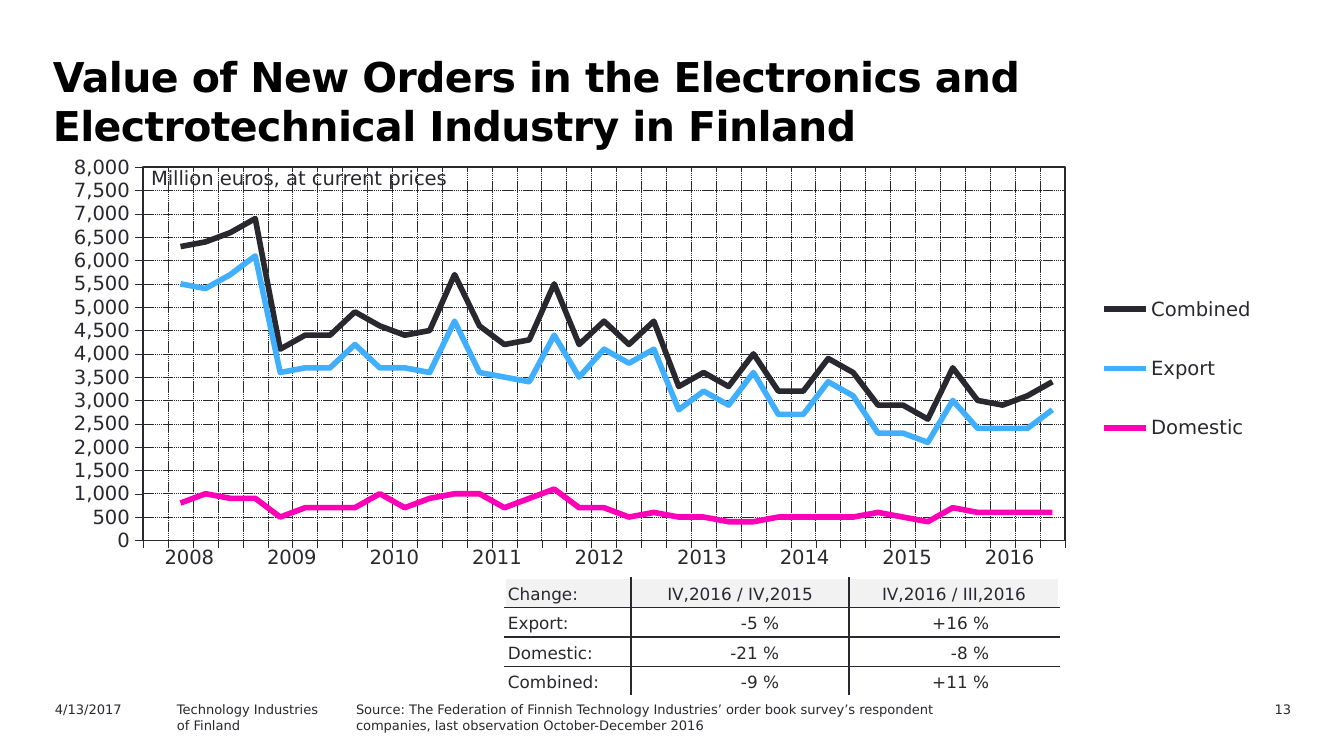
from lxml import etree
from pptx import Presentation
from pptx import util as u
from pptx.chart.data import CategoryChartData
from pptx.dml.color import RGBColor
from pptx.enum import chart as ch
from pptx.enum import dml, text
from pptx.oxml.ns import qn

FONT, INK, WHITE = "DejaVu Sans", "29282E", "FFFFFF"
NO_STYLE = "{2D5ABB26-0587-4C30-8999-92F81FD0307C}"
SERIES = {
    "Combined": (INK, [
        None, 6300, 6400, 6600, 6900, 4100, 4400, 4400, 4900, 4600, 4400, 4500, 5700,
        4600, 4200, 4300, 5500, 4200, 4700, 4200, 4700, 3300, 3600, 3300, 4000,
        3200, 3200, 3900, 3600, 2900, 2900, 2600, 3700, 3000, 2900, 3100, 3400]),
    "Export": ("40AFFF", [
        None, 5500, 5400, 5700, 6100, 3600, 3700, 3700, 4200, 3700, 3700, 3600, 4700,
        3600, 3500, 3400, 4400, 3500, 4100, 3800, 4100, 2800, 3200, 2900, 3600,
        2700, 2700, 3400, 3100, 2300, 2300, 2100, 3000, 2400, 2400, 2400, 2800]),
    "Domestic": ("FF00B8", [
        None, 800, 1000, 900, 900, 500, 700, 700, 700, 1000, 700, 900, 1000,
        1000, 700, 900, 1100, 700, 700, 500, 600, 500, 500, 400, 400,
        500, 500, 500, 500, 600, 500, 400, 700, 600, 600, 600, 600]),
}
CHANGES = [
    ["Change:", "IV,2016 / IV,2015", "IV,2016 / III,2016"],
    ["Export:", "-5 %", "+16 %"],
    ["Domestic:", "-21 %", "-8 %"],
    ["Combined:", "-9 %", "+11 %"],
]


def px(n):
    """Turn pixels into EMU."""
    return u.Emu(round(n * 914400 / 134.4))


def rgb(value):
    """Turn a hex string into a colour."""
    return RGBColor.from_string(value)


def style_font(font, size, color=INK, bold=False):
    """Set the typeface, size, colour and weight of a font."""
    font.name, font.size, font.bold = FONT, u.Pt(size), bold
    font.color.rgb = rgb(color)


def style_line(line, width, color=INK, dash=None):
    """Set the colour, width and dash of a line."""
    line.color.rgb = rgb(color)
    line.width = u.Pt(width)
    if dash:
        line.dash_style = dash


def write(tf, content, size, color=INK, bold=False, align="LEFT", spacing=None):
    """Fill a text frame, one paragraph for each line of content."""
    for i, line in enumerate(content.split("\n")):
        p = tf.add_paragraph() if i else tf.paragraphs[0]
        p.alignment = getattr(text.PP_ALIGN, align)
        r = p.add_run()
        r.text = line
        style_font(r.font, size, color, bold)
        if spacing is not None:
            r.font._element.set("spc", str(spacing))


def add_text(s, box, content, size, wrap=True, insets=(13, 7, 13, 7), **fmt):
    """Add a text box with the given insets."""
    tf = s.shapes.add_textbox(*map(px, box)).text_frame
    tf.word_wrap = wrap
    tf.margin_left, tf.margin_top, tf.margin_right, tf.margin_bottom = map(px, insets)
    write(tf, content, size, **fmt)


def add_plain_table(s, box, rows, cols):
    """Add a table without banding or style."""
    frame = s.shapes.add_table(rows, cols, *map(px, box))
    for style in frame._element.iter(qn("a:tableStyleId")):
        style.text = NO_STYLE
    table = frame.table
    table.first_row = table.horz_banding = False
    return table


def set_borders(cell, **colors):
    """Draw one-point cell borders, keyed by side."""
    tcPr = cell._tc.get_or_add_tcPr()
    for i, (side, color) in enumerate(colors.items()):
        ln = etree.Element(qn("a:ln" + side), w="12700")
        fill = etree.SubElement(ln, qn("a:solidFill"))
        etree.SubElement(fill, qn("a:srgbClr"), val=color)
        tcPr.insert(i, ln)


def set_layout(parent, index, x, y, w, h, inner=False):
    """Place a chart part by fractions of the chart area."""
    for old in parent.findall(qn("c:layout")):
        parent.remove(old)
    layout = etree.Element(qn("c:layout"))
    manual = etree.SubElement(layout, qn("c:manualLayout"))
    if inner:
        etree.SubElement(manual, qn("c:layoutTarget"), val="inner")
    for key in "xMode", "yMode":
        etree.SubElement(manual, qn("c:" + key), val="edge")
    for key, value in zip("xywh", (x, y, w, h)):
        etree.SubElement(manual, qn("c:" + key), val=str(value))
    parent.insert(index, layout)


def add_orders_chart(s, box):
    """Add the line chart of new orders with its unit label."""
    data = CategoryChartData(number_format="#,##0")
    data.categories = [str(n + 1) for n in range(len(SERIES["Combined"][1]))]
    for name, (_, values) in SERIES.items():
        data.add_series(name, values)
    chart = s.shapes.add_chart(ch.XL_CHART_TYPE.LINE, *map(px, box), data).chart
    style_font(chart.font, 10.5)
    chart.has_title = False
    chart.plots[0].vary_by_categories = False
    for series in chart.plots[0].series:
        series.smooth = False
        series.marker.style = ch.XL_MARKER_STYLE.NONE
        style_line(series.format.line, 3, SERIES[series.name][0])

    for axis in chart.category_axis, chart.value_axis:
        axis.has_major_gridlines = True
        style_line(axis.major_gridlines.format.line, 0.25, dash=dml.MSO_LINE.SQUARE_DOT)
        style_line(axis.format.line, 0.22)
        axis.major_tick_mark = ch.XL_TICK_MARK.OUTSIDE
        axis.minor_tick_mark = ch.XL_TICK_MARK.NONE
    chart.category_axis.tick_label_position = ch.XL_TICK_LABEL_POSITION.NONE
    axis = chart.value_axis
    axis.minimum_scale, axis.maximum_scale, axis.major_unit = 0, 8000, 500
    axis.tick_labels.number_format = "#,##0"
    axis.tick_labels.number_format_is_linked = False
    style_font(axis.tick_labels.font, 10.5)
    for cross in chart._chartSpace.iter(qn("c:crossBetween")):
        cross.set("val", "midCat")

    chart.has_legend = True
    chart.legend.position = ch.XL_LEGEND_POSITION.RIGHT
    chart.legend.include_in_layout = False
    style_font(chart.legend.font, 10.5)
    set_layout(chart.legend._element, 1, 0.85, 0.25, 0.14, 0.48)

    area = chart._chartSpace.chart.plotArea
    set_layout(area, 0, 0.082, 0.041, 0.747, 0.833, inner=True)
    spPr = etree.SubElement(area, qn("c:spPr"))
    etree.SubElement(spPr, qn("a:noFill"))
    ln = etree.SubElement(spPr, qn("a:ln"), w="12700")
    fill = etree.SubElement(ln, qn("a:solidFill"))
    etree.SubElement(fill, qn("a:srgbClr"), val=INK)

    x, y, _, _ = box
    add_text(s, (x + 97, y + 10, 328, 36), "Million euros, at current prices", 10.5,
             wrap=False, insets=(12, 7, 12, 7))


def add_years(s, box):
    """Add the row of years under the chart."""
    years = range(2008, 2017)
    table = add_plain_table(s, box, 1, len(years))
    for cell, year in zip(table.iter_cells(), years):
        cell.fill.background()
        write(cell.text_frame, str(year), 10.5, align="CENTER")


def add_changes(s, box):
    """Add the table of changes, ruled inside and white at its edges."""
    table = add_plain_table(s, box, len(CHANGES), len(CHANGES[0]))
    for column, width in zip(table.columns, (126, 218, 210)):
        column.width = px(width)
    last_row, last_col = len(CHANGES) - 1, len(CHANGES[0]) - 1
    for i, row in enumerate(CHANGES):
        for j, value in enumerate(row):
            cell = table.cell(i, j)
            number = i > 0 and j > 0
            cell.margin_left = cell.margin_top = cell.margin_bottom = px(3)
            cell.margin_right = px(70 if number else 3)
            cell.vertical_anchor = text.MSO_ANCHOR.BOTTOM
            cell.fill.solid()
            cell.fill.fore_color.rgb = rgb(WHITE if i else "F2F2F2")
            set_borders(cell, L=INK if j else WHITE, R=INK if j < last_col else WHITE,
                        T=INK if i else WHITE, B=INK if i < last_row else WHITE)
            align = "RIGHT" if number else "CENTER" if j else "LEFT"
            write(cell.text_frame, value, 9, align=align)


def add_footer(s, box):
    """Add the date, publisher, source and page number."""
    x, y, w, h = box
    add_text(s, (x, y, 134, h), "4/13/2017", 7)
    add_text(s, (x + 122, y, 233, h), "Technology Industries\nof Finland", 7)
    add_text(s, (x + 301, y, 640, h),
             "Source: The Federation of Finnish Technology Industries’ order book survey’s "
             "respondent companies, last observation October-December 2016", 7)
    add_text(s, (x + w - 126, y, 126, h), "13", 7, align="RIGHT")


def main():
    """Build and save the slide."""
    prs = Presentation()
    prs.slide_width, prs.slide_height = px(1344), px(756)
    s = prs.slides.add_slide(prs.slide_layouts[6])
    add_text(s, (38, 42, 1175, 95),
             "Value of New Orders in the Electronics and Electrotechnical Industry in Finland",
             22, insets=(15, 9, 13, 0), color="000000", bold=True, spacing=-30)
    add_orders_chart(s, (42, 149, 1234, 448))
    add_years(s, (138, 540, 923, 42))
    add_changes(s, (505, 578, 554, 118))
    add_footer(s, (42, 695, 1262, 24))
    prs.save("out.pptx")


if __name__ == "__main__":
    main()
